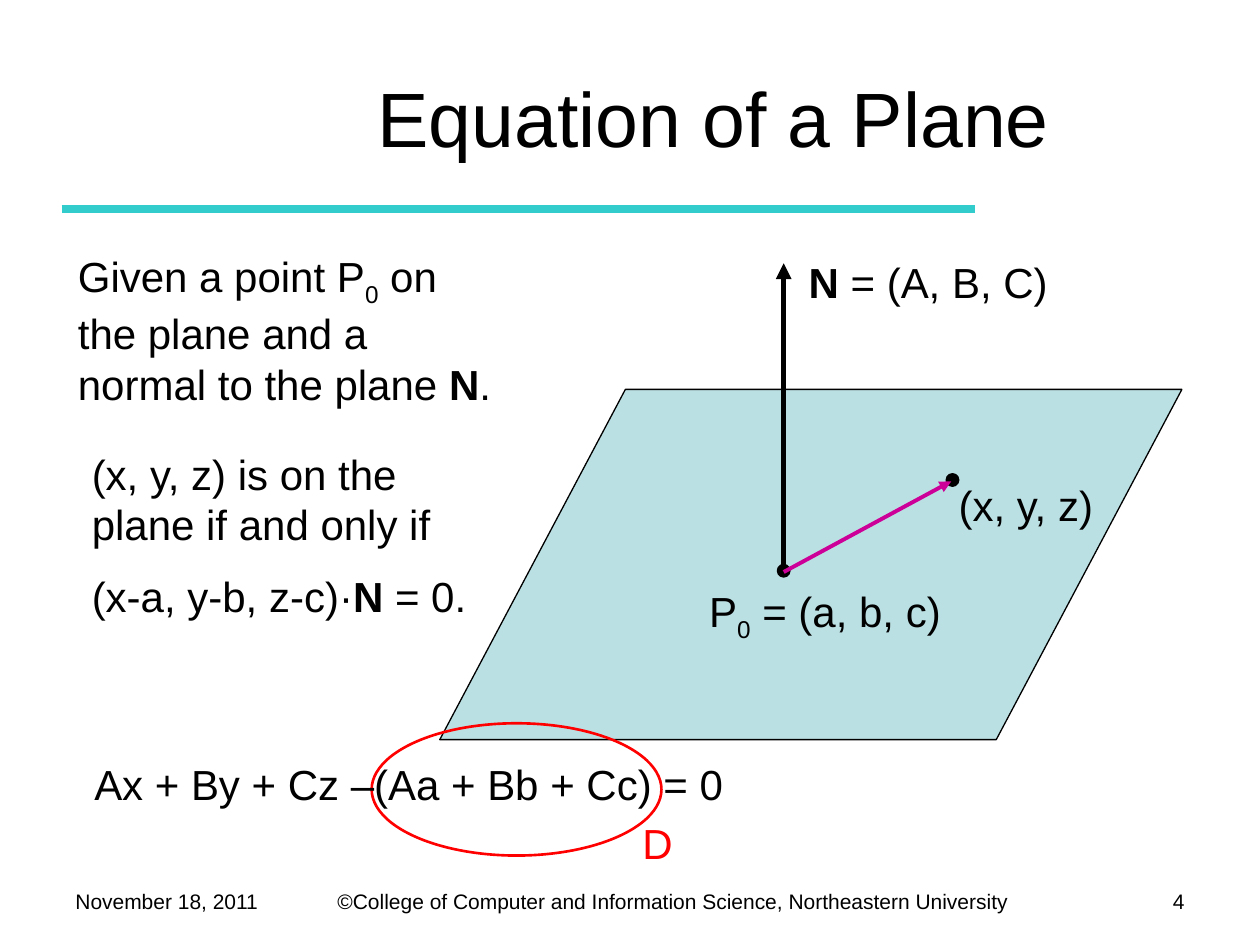
from pptx import Presentation
from pptx.dml.color import RGBColor
from pptx.enum.shapes import MSO_CONNECTOR, MSO_SHAPE as SHAPE
from pptx.enum.text import MSO_ANCHOR, PP_ALIGN as ALIGN
from pptx.oxml.ns import qn
from pptx.util import Inches, Pt
from lxml.etree import SubElement

BLACK = RGBColor(0x00, 0x00, 0x00)
TEAL = RGBColor(0x33, 0xCC, 0xCC)
PALE = RGBColor(0xBB, 0xE0, 0xE3)
MAGENTA = RGBColor(0xCC, 0x00, 0x99)
RED = RGBColor(0xFF, 0x00, 0x00)

prs = Presentation()
prs.slide_width, prs.slide_height = Inches(10), Inches(7.5)
COL, ROW = prs.slide_width / 100, prs.slide_height / 75
s = prs.slides.add_slide(prs.slide_layouts[6])


def grid(x, y, w, h):
    return int(x * COL), int(y * ROW), int(w * COL), int(h * ROW)


def add_text(box, paragraphs, size=24, color=BLACK, align=ALIGN.LEFT, gap=0):
    tf = s.shapes.add_textbox(*grid(*box)).text_frame
    tf.word_wrap = True
    for i, runs in enumerate(paragraphs):
        p = tf.paragraphs[0] if i == 0 else tf.add_paragraph()
        p.alignment = align
        if i:
            p.space_before = Pt(gap)
        for text, style in runs:
            r = p.add_run()
            r.text = text
            r.font.name, r.font.size = "Arial", Pt(size)
            r.font.color.rgb = color
            r.font.bold = style == "bold"
            if style == "sub":
                r.font._element.set("baseline", "-25000")
    return tf


footers = [
    ((25.8, 70, 56.6, 3), "©College of Computer and Information Science, Northeastern University", ALIGN.LEFT),
    ((5, 70, 17.5, 3.3), "November 18, 2011", ALIGN.LEFT),
    ((86.7, 70, 8.3, 3.5), "4", ALIGN.RIGHT),
]
for box, text, align in footers:
    add_text(box, [[(text, "")]], 12, align=align)

title = add_text((18.3, 3, 76.7, 12.5), [[("Equation of a Plane", "")]], 44, align=ALIGN.CENTER)
title.vertical_anchor = MSO_ANCHOR.MIDDLE

shapes = [
    (SHAPE.PARALLELOGRAM, (34.9, 30.9, 58.9, 27.8), PALE, BLACK, 0.75),
    (SHAPE.OVAL, (61.7, 44.8, 1, 1), BLACK, BLACK, 0.75),
    (SHAPE.OVAL, (75.1, 37.6, 1, 1), BLACK, BLACK, 0.75),
    (SHAPE.OVAL, (29.5, 57.4, 23, 10.5), None, RED, 1.5),
]
for kind, box, fill, line, width in shapes:
    sp = s.shapes.add_shape(kind, *grid(*box))
    sp.shadow.inherit = False
    if kind == SHAPE.PARALLELOGRAM:
        sp.adjustments[0] = 0.53
    if fill is None:
        sp.fill.background()
    else:
        sp.fill.solid()
        sp.fill.fore_color.rgb = fill
    sp.line.color.rgb = line
    sp.line.width = Pt(width)

lines = [
    ((4.9, 16.6, 77.4, 16.6), TEAL, 4.5, False),
    ((62.2, 45.5, 62.2, 20.9), BLACK, 3, True),
    ((62.2, 45.4, 75.5, 38.2), MAGENTA, 2.25, True),
]
for ends, color, width, arrow in lines:
    c = s.shapes.add_connector(MSO_CONNECTOR.STRAIGHT, *grid(*ends))
    c.line.color.rgb = color
    c.line.width = Pt(width)
    if arrow:
        SubElement(c.line._get_or_add_ln(), qn("a:tailEnd"), type="triangle")
    SubElement(c._element.spPr, qn("a:effectLst"))

labels = [
    ((63.2, 19.9, 21.3, 5), [[("N", "bold"), (" = (A, B, C)", "")]], BLACK),
    ((55.3, 46, 21.3, 5), [[("P", ""), ("0", "sub"), (" = (a, b, c)", "")]], BLACK),
    ((75.1, 37.6, 14, 5), [[("(x, y, z)", "")]], BLACK),
    ((5.2, 19.4, 35, 13), [[("Given a point P", ""), ("0", "sub"),
                            (" on the plane and a normal to the plane ", ""),
                            ("N", "bold"), (".", "")]], BLACK),
    ((6.3, 35.1, 33.2, 15), [[("(x, y, z) is on the plane if and only if", "")],
                             [("(x-a, y-b, z-c)·", ""), ("N", "bold"), (" = 0.", "")]], BLACK),
    ((6.5, 59.7, 55, 5), [[("Ax + By + Cz –(Aa + Bb + Cc) = 0", "")]], BLACK),
    ((50, 64.4, 5.1, 5), [[("D", "")]], RED),
]
for box, paragraphs, color in labels:
    add_text(box, paragraphs, color=color, gap=12)

prs.save("out.pptx")
